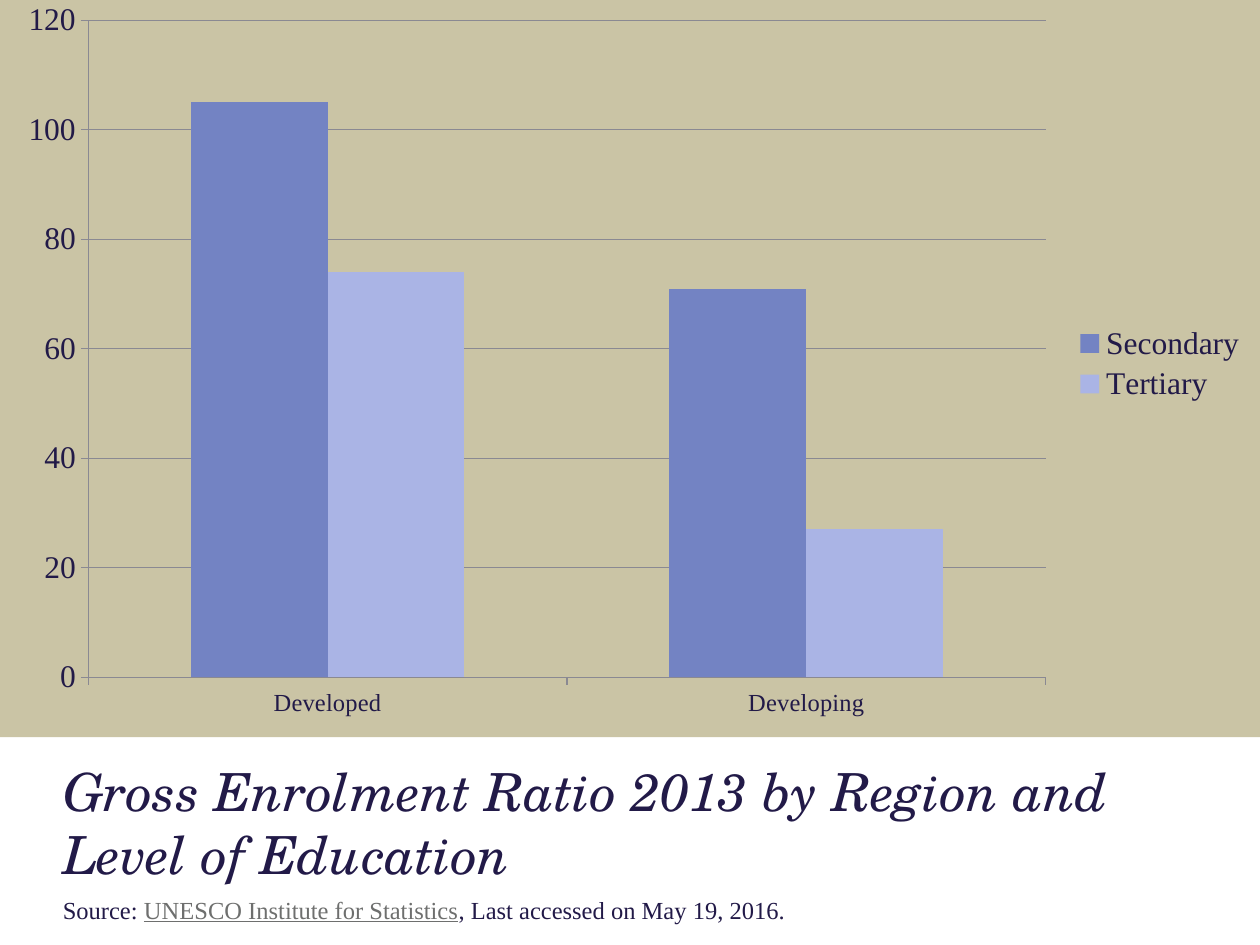
from lxml import etree
from pptx import Presentation
from pptx import util as u
from pptx.chart.data import CategoryChartData
from pptx.dml.color import RGBColor
from pptx.enum import chart as ch, text as tx
from pptx.oxml import parse_xml
from pptx.oxml.ns import nsdecls, qn

HUES = {"ink": "221A48", "sand": "CAC4A5", "axis": "8A8992", "link": "6E6F6E",
        "Secondary": "7383C3", "Tertiary": "AAB4E5"}
SERIF, SCHOOL = "Times New Roman", "TeX Gyre Schola"
RATES = {"Secondary": (105, 71), "Tertiary": (74, 27)}
PLOT = {"x": 0.07, "y": 0.04, "w": 0.76, "h": 0.88}


def hue(name):
    """Return the named colour."""
    return RGBColor.from_string(HUES[name])


def style(font, size, face=SERIF, color="ink"):
    """Set the size, face and colour of a font."""
    font.size, font.name = u.Pt(size), face
    font.color.rgb = hue(color)


def rule(line):
    """Draw a thin axis or grid line."""
    line.color.rgb = hue("axis")
    line.width = u.Pt(0.75)


def share(deck, x, y, w, h):
    """Turn shares of the slide into a box."""
    wide, high = deck.slide_width, deck.slide_height
    return int(x * wide), int(y * high), int(w * wide), int(h * high)


def back(chart):
    """Fill the chart area and fix the inner plot box."""
    root = chart.element
    root.find(qn("c:chart")).addnext(parse_xml(
        f'<c:spPr {nsdecls("c", "a")}><a:solidFill><a:srgbClr val="{HUES["sand"]}"/>'
        '</a:solidFill><a:ln><a:noFill/></a:ln></c:spPr>'))
    area = root.find(".//" + qn("c:plotArea"))
    for old in area.findall(qn("c:layout")):
        area.remove(old)
    lay = etree.Element(qn("c:layout"))
    hand = etree.SubElement(lay, qn("c:manualLayout"))
    parts = {"layoutTarget": "inner", "xMode": "edge", "yMode": "edge", **PLOT}
    for tag, val in parts.items():
        etree.SubElement(hand, qn("c:" + tag)).set("val", str(val))
    area.insert(0, lay)


def graph(slide, box):
    """Place the enrolment column chart."""
    data = CategoryChartData(number_format="0")
    data.categories = ["Developed", "Developing"]
    for name, vals in RATES.items():
        data.add_series(name, vals)
    chart = slide.shapes.add_chart(ch.XL_CHART_TYPE.COLUMN_CLUSTERED, *box, data).chart
    style(chart.font, 18)
    chart.has_title = False
    chart.has_legend = True
    chart.legend.position = ch.XL_LEGEND_POSITION.RIGHT
    chart.legend.include_in_layout = False
    style(chart.legend.font, 18)
    plot = chart.plots[0]
    plot.gap_width, plot.overlap, plot.vary_by_categories = 150, 0, False
    for bar in plot.series:
        bar.format.fill.solid()
        bar.format.fill.fore_color.rgb = hue(bar.name)
    for axis, size in ((chart.category_axis, 14), (chart.value_axis, 18)):
        style(axis.tick_labels.font, size)
        axis.major_tick_mark = ch.XL_TICK_MARK.OUTSIDE
        axis.minor_tick_mark = ch.XL_TICK_MARK.NONE
        rule(axis.format.line)
    axis.minimum_scale, axis.maximum_scale, axis.major_unit = 0, 120, 20
    rule(axis.major_gridlines.format.line)
    back(chart)


def head(slide, box):
    """Place the slide title."""
    title = slide.shapes.title
    title.left, title.top, title.width, title.height = box
    frame = title.text_frame
    frame.vertical_anchor = tx.MSO_ANCHOR.MIDDLE
    para = frame.paragraphs[0]
    para.alignment = tx.PP_ALIGN.LEFT
    run = para.add_run()
    run.text = "Gross Enrolment Ratio 2013 by Region and Level of Education"
    style(run.font, 30, SCHOOL)
    run.font.italic = True


def source(slide, box):
    """Place the source line."""
    frame = slide.shapes.add_textbox(*box).text_frame
    frame.word_wrap = True
    frame.auto_size = tx.MSO_AUTO_SIZE.SHAPE_TO_FIT_TEXT
    para = frame.paragraphs[0]
    for words, color in (("Source: ", "ink"),
                         ("UNESCO Institute for Statistics", "link"),
                         (", Last accessed on May 19, 2016.", "ink")):
        run = para.add_run()
        run.text = words
        style(run.font, 14, color=color)
        run.font.underline = color == "link"


def main():
    """Build and save the slide."""
    deck = Presentation()
    deck.slide_width, deck.slide_height = u.Inches(10), u.Inches(7.5)
    slide = deck.slides.add_slide(deck.slide_layouts[5])
    graph(slide, share(deck, 0, -0.01, 1, 0.79))
    head(slide, share(deck, 0.04, 0.76, 0.9, 0.22))
    source(slide, share(deck, 0.04, 0.94, 0.88, 0.05))
    deck.save("out.pptx")


if __name__ == "__main__":
    main()
